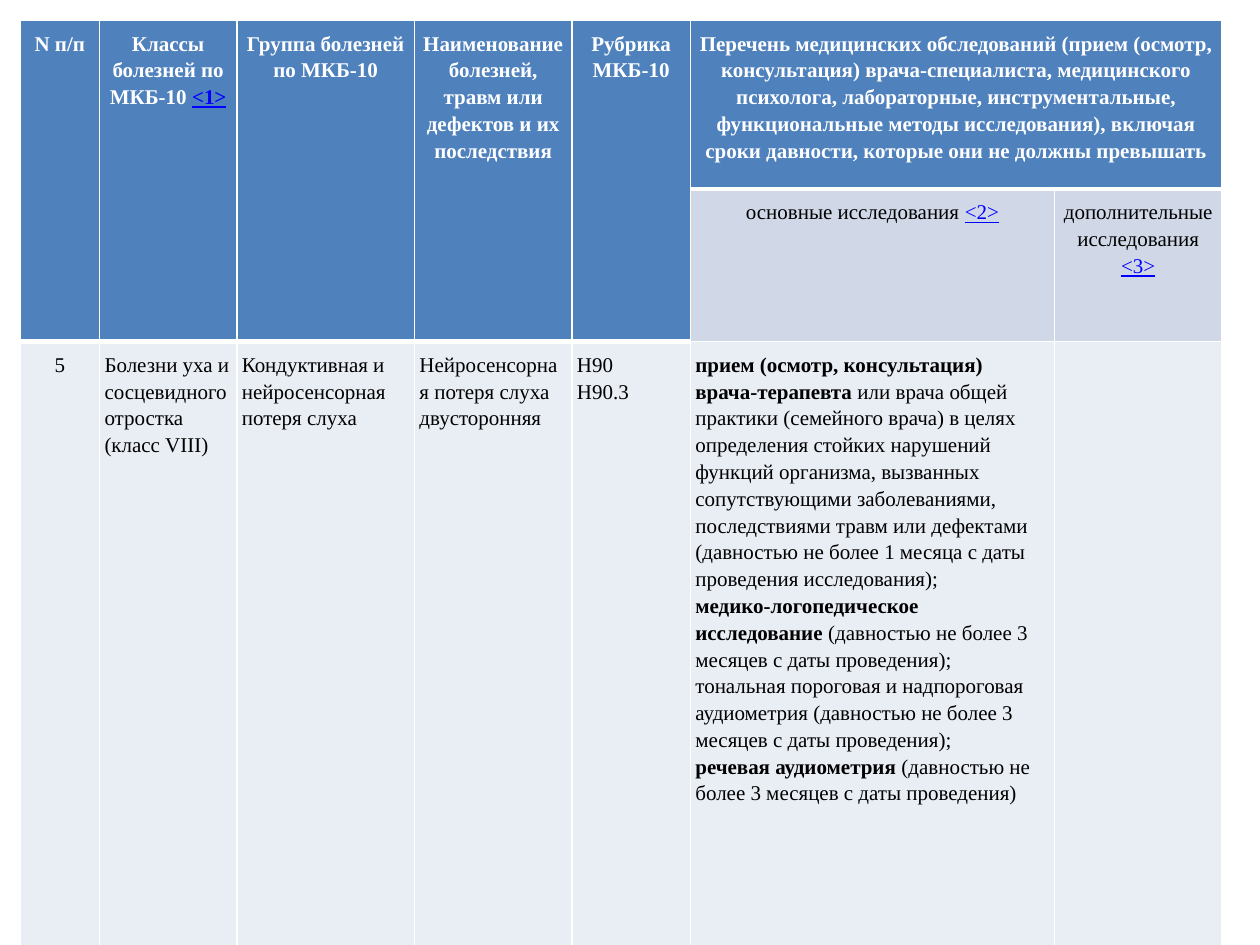
import pptx
import pptx.util
import pptx.dml.color
import pptx.enum.text
import pptx.oxml
import pptx.oxml.ns
from pptx.util import Inches

BLUE, PALE, LIGHT = "4F81BD", "D0D8E8", "E9EDF4"
WHITE, BLACK, LINK = "FFFFFF", "000000", "0000FF"


def rgb(value):
    return pptx.dml.color.RGBColor.from_string(value)


def run(text, **fmt):
    return text, fmt


class Deck:
    """Holds the style and the current slide, and adds elements to it."""

    font = "Times New Roman"
    size = 12
    spacing = 1.15

    def __init__(self, width, height):
        self.prs = pptx.Presentation()
        self.prs.slide_width, self.prs.slide_height = Inches(width), Inches(height)
        self.s = self.prs.slides.add_slide(self.prs.slide_layouts[6])

    def table(self, left, top, widths, heights):
        frame = self.s.shapes.add_table(
            len(heights), len(widths), Inches(left), Inches(top),
            Inches(sum(widths)), Inches(sum(heights)))
        tbl = frame.table
        tbl.horz_banding = False
        for col, width in zip(tbl.columns, widths):
            col.width = Inches(width)
        for row, height in zip(tbl.rows, heights):
            row.height = Inches(height)
        return tbl

    def border(self, cell, bottom):
        tcPr = cell._tc.get_or_add_tcPr()
        for side, width in zip("LRTB", (1, 1, 1, bottom)):
            tcPr.append(pptx.oxml.parse_xml(
                f'<a:ln{side} {pptx.oxml.ns.nsdecls("a")} w="{pptx.util.Pt(width)}">'
                f'<a:solidFill><a:srgbClr val="{WHITE}"/></a:solidFill></a:ln{side}>'))

    def cell(self, cell, paragraphs, fill, color=BLACK, bold=False, center=False, bottom=1):
        self.border(cell, bottom)
        cell.fill.solid()
        cell.fill.fore_color.rgb = rgb(fill)
        cell.margin_left = cell.margin_right = Inches(0.04)
        cell.margin_top = cell.margin_bottom = Inches(0.07)
        tf = cell.text_frame
        align = pptx.enum.text.PP_ALIGN
        for i, runs in enumerate(paragraphs):
            p = tf.add_paragraph() if i else tf.paragraphs[0]
            p.alignment = align.CENTER if center else align.LEFT
            p.line_spacing = self.spacing
            for text, fmt in runs:
                self.text(p, text, **{"color": color, "bold": bold, **fmt})

    def text(self, p, text, color, bold, underline=False):
        r = p.add_run()
        r.text = text
        r.font.name = self.font
        r.font.size = pptx.util.Pt(self.size)
        r.font.color.rgb = rgb(color)
        r.font.bold = bold
        r.font.underline = underline


def note(number):
    return run(f"<{number}>", color=LINK, underline=True)


HEADERS = [
    [run("N п/п")],
    [run("Классы болезней по МКБ-10 "), note(1)],
    [run("Группа болезней по МКБ-10")],
    [run("Наименование болезней, травм или дефектов и их последствия")],
    [run("Рубрика МКБ-10")],
    [run("Перечень медицинских обследований (прием (осмотр, консультация) "
         "врача-специалиста, медицинского психолога, лабораторные, инструментальные, "
         "функциональные методы исследования), включая сроки давности, которые они "
         "не должны превышать")],
]
SUBHEADERS = [
    [run("основные исследования "), note(2)],
    [run("дополнительные исследования "), note(3)],
]
TERM = "(давностью не более 3 месяцев с даты проведения)"
BODY = [
    [[run("5")]],
    [[run("Болезни уха и сосцевидного отростка (класс VIII)")]],
    [[run("Кондуктивная и нейросенсорная потеря слуха")]],
    [[run("Нейросенсорная потеря слуха двусторонняя")]],
    [[run("H90")], [run("H90.3")]],
    [
        [run("прием (осмотр, консультация) врача-терапевта ", bold=True),
         run("или врача общей практики (семейного врача) в целях определения стойких "
             "нарушений функций организма, вызванных сопутствующими заболеваниями, "
             "последствиями травм или дефектами (давностью не более 1 месяца с даты "
             "проведения исследования);")],
        [run("медико-логопедическое исследование ", bold=True), run(TERM + ";")],
        [run(f"тональная пороговая и надпороговая аудиометрия {TERM};")],
        [run("речевая аудиометрия ", bold=True), run(TERM)],
    ],
    [],
]


def main():
    deck = Deck(10, 7.5)
    tbl = deck.table(0.16, 0.16, [0.63, 1.09, 1.41, 1.25, 0.94, 2.89, 1.33],
                     [1.34, 1.21, 4.86])
    for col in range(5):
        tbl.cell(0, col).merge(tbl.cell(1, col))
        deck.cell(tbl.cell(1, col), [], BLUE, bottom=3)
    tbl.cell(0, 5).merge(tbl.cell(0, 6))
    deck.cell(tbl.cell(0, 6), [], BLUE, bottom=3)
    for col, runs in enumerate(HEADERS):
        deck.cell(tbl.cell(0, col), [runs], BLUE, WHITE, bold=True, center=True, bottom=3)
    for col, runs in enumerate(SUBHEADERS, 5):
        deck.cell(tbl.cell(1, col), [runs], PALE, center=True)
    for col, paragraphs in enumerate(BODY):
        deck.cell(tbl.cell(2, col), paragraphs, LIGHT, center=col == 0)
    deck.prs.save("out.pptx")


if __name__ == "__main__":
    main()
